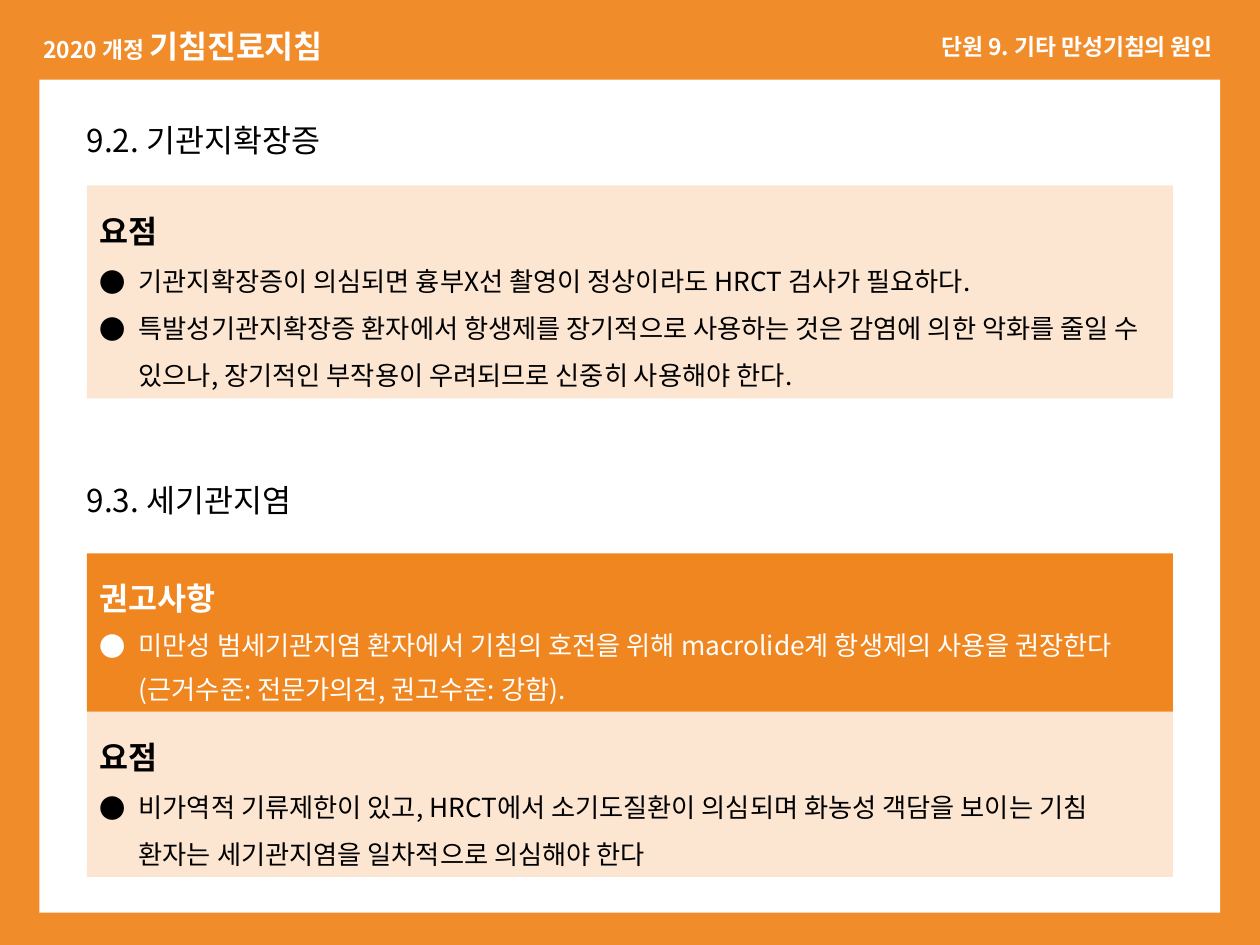
from dataclasses import dataclass

from lxml.etree import SubElement
from pptx import Presentation
from pptx.dml.color import RGBColor
from pptx.enum.shapes import MSO_SHAPE
from pptx.enum.text import MSO_ANCHOR, MSO_AUTO_SIZE, PP_ALIGN
from pptx.oxml.ns import qn
from pptx.util import Pt


@dataclass(frozen=True)
class Theme:
    font: str = "Noto Sans CJK KR"
    orange: str = "F08620"
    backdrop: str = "F18C2B"
    white: str = "FFFFFF"
    black: str = "000000"
    tint: int = 20
    title: int = 18
    body: int = 15
    label: int = 13
    leading: float = 1.5
    indent: float = 22.5


def write(paragraph, text, *, font, size, color, bold=False):
    run = paragraph.add_run()
    run.text = text
    run.font.name = font
    run.font.size = Pt(size)
    run.font.bold = bold
    run.font.color.rgb = RGBColor.from_string(color)
    SubElement(run.font._element, qn("a:ea"), typeface=font)


class Page:
    def __init__(self, slide, theme):
        self.slide = slide
        self.theme = theme

    def backdrop(self):
        fill = self.slide.background.fill
        fill.solid()
        fill.fore_color.rgb = RGBColor.from_string(self.theme.backdrop)

    def rectangle(self, left, top, width, height, color, opacity=100):
        box = self.slide.shapes.add_shape(
            MSO_SHAPE.RECTANGLE, Pt(left), Pt(top), Pt(width), Pt(height))
        box.shadow.inherit = False
        box.line.fill.background()
        box.fill.solid()
        box.fill.fore_color.rgb = RGBColor.from_string(color)
        if opacity < 100:
            tone = box.fill._xPr.find(qn("a:solidFill"))[0]
            SubElement(tone, qn("a:alpha"), val=str(opacity * 1000))
        return box

    def caption(self, left, top, width, height, parts, color,
                align=PP_ALIGN.LEFT, wrap=True):
        box = self.slide.shapes.add_textbox(Pt(left), Pt(top), Pt(width), Pt(height))
        frame = box.text_frame
        frame.word_wrap = wrap
        frame.auto_size = MSO_AUTO_SIZE.SHAPE_TO_FIT_TEXT
        line = frame.paragraphs[0]
        line.alignment = align
        for text, size, bold in parts:
            write(line, text, font=self.theme.font, size=size, color=color, bold=bold)

    def heading(self, top, width, text):
        self.caption(42.5, top, width, 29, [(text, self.theme.title, False)],
                     self.theme.black, wrap=False)

    def panel(self, top, height, title, points, color, opacity=100, leading=None):
        theme = self.theme
        box = self.rectangle(49.7, top, 620.6, height, theme.orange, opacity)
        frame = box.text_frame
        frame.word_wrap = True
        frame.auto_size = MSO_AUTO_SIZE.SHAPE_TO_FIT_TEXT
        frame.vertical_anchor = MSO_ANCHOR.MIDDLE
        first = frame.paragraphs[0]
        first.alignment = PP_ALIGN.LEFT
        first.line_spacing = theme.leading
        write(first, title, font=theme.font, size=theme.title, color=color, bold=True)
        for point in points:
            self.bullet(frame.add_paragraph(), point, color, leading or theme.leading)

    def bullet(self, paragraph, text, color, leading):
        theme = self.theme
        paragraph.alignment = PP_ALIGN.LEFT
        paragraph.line_spacing = leading
        properties = paragraph._p.get_or_add_pPr()
        properties.set("marL", str(Pt(theme.indent)))
        properties.set("indent", str(-Pt(theme.indent)))
        SubElement(properties, qn("a:buFont"), typeface=theme.font)
        SubElement(properties, qn("a:buChar"), char="●")
        write(paragraph, text, font=theme.font, size=theme.body, color=color)


def main():
    theme = Theme()
    deck = Presentation()
    deck.slide_width, deck.slide_height = Pt(720), Pt(540)
    page = Page(deck.slides.add_slide(deck.slide_layouts[6]), theme)

    page.backdrop()
    page.rectangle(22.5, 45.5, 674.7, 476, theme.white)
    page.caption(17.8, 12, 348.5, 29,
                 [("2020 개정 ", theme.label, True), ("기침진료지침", theme.title, True)],
                 theme.white)
    page.caption(351.5, 15, 348.5, 23,
                 [("단원 9. 기타 만성기침의 원인", theme.label, True)],
                 theme.white, align=PP_ALIGN.RIGHT)

    page.heading(65.5, 159, "9.2. 기관지확장증")
    page.panel(106, 121.7, "요점", [
        "기관지확장증이 의심되면 흉부X선 촬영이 정상이라도 HRCT 검사가 필요하다.",
        "특발성기관지확장증 환자에서 항생제를 장기적으로 사용하는 것은 감염에 의한 악화를 줄일 수 "
        "있으나, 장기적인 부작용이 우려되므로 신중히 사용해야 한다.",
    ], theme.black, opacity=theme.tint)

    page.heading(271.5, 146, "9.3. 세기관지염")
    page.panel(406.7, 94.5, "요점", [
        "비가역적 기류제한이 있고, HRCT에서 소기도질환이 의심되며 화농성 객담을 보이는 기침 "
        "환자는 세기관지염을 일차적으로 의심해야 한다",
    ], theme.black, opacity=theme.tint)
    page.panel(316.2, 90.5, "권고사항", [
        "미만성 범세기관지염 환자에서 기침의 호전을 위해 macrolide계 항생제의 사용을 권장한다 "
        "(근거수준: 전문가의견, 권고수준: 강함).",
    ], theme.white, leading=Pt(25))

    deck.save("out.pptx")


if __name__ == "__main__":
    main()
